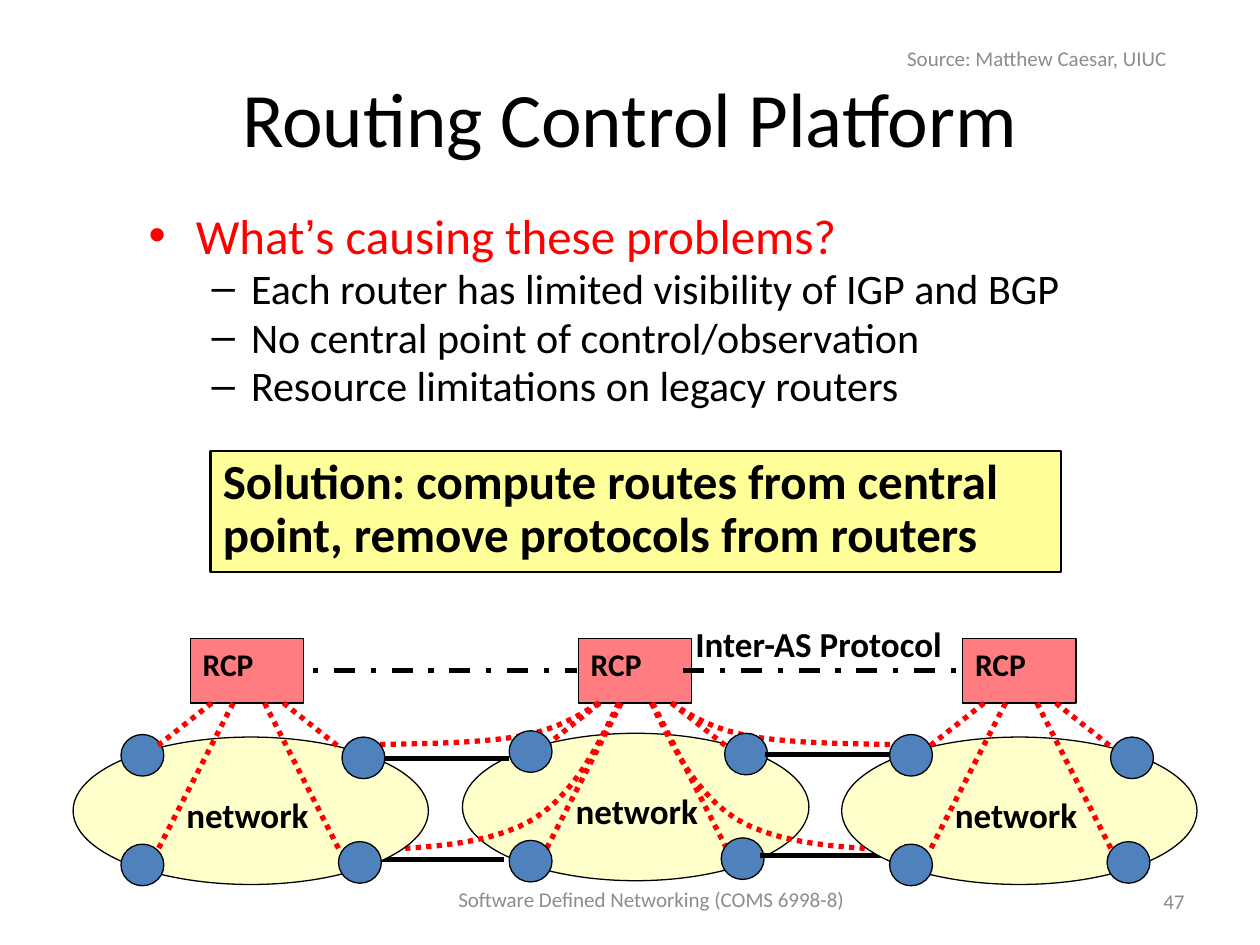
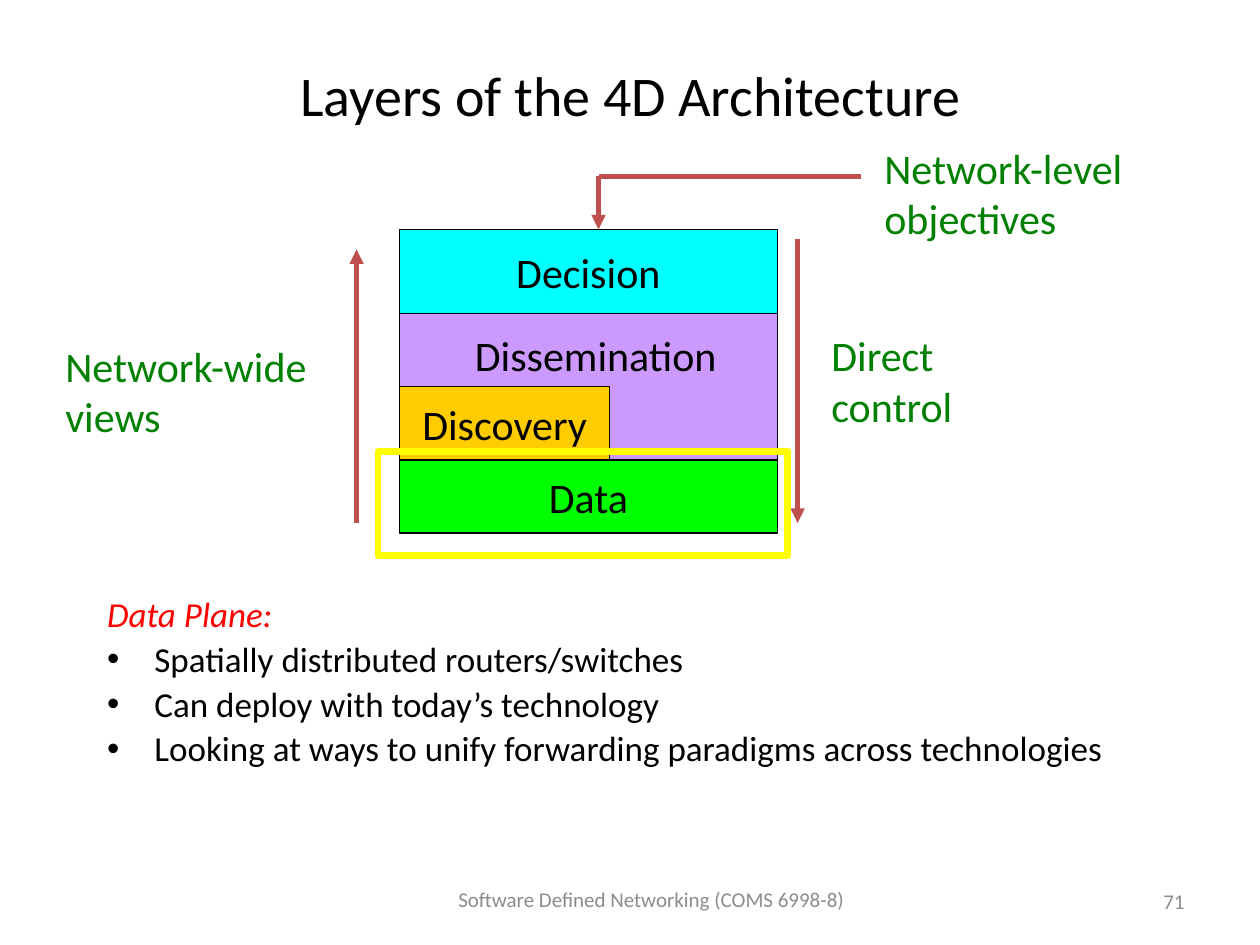
from collections import namedtuple
from dataclasses import dataclass

from lxml import etree
from pptx import Presentation
from pptx.dml.color import RGBColor
from pptx.enum.dml import MSO_LINE
from pptx.enum.shapes import MSO_CONNECTOR, MSO_SHAPE
from pptx.enum.text import MSO_ANCHOR, MSO_AUTO_SIZE, PP_ALIGN
from pptx.oxml.ns import qn
from pptx.util import Inches, Pt

RECTANGLE, OVAL = MSO_SHAPE.RECTANGLE, MSO_SHAPE.OVAL
STRAIGHT = MSO_CONNECTOR.STRAIGHT
DOTTED, DASH_DOT = MSO_LINE.ROUND_DOT, MSO_LINE.DASH_DOT
LEFT, CENTER, RIGHT = PP_ALIGN.LEFT, PP_ALIGN.CENTER, PP_ALIGN.RIGHT
TOP, MIDDLE = MSO_ANCHOR.TOP, MSO_ANCHOR.MIDDLE
NO_AUTOFIT = MSO_AUTO_SIZE.NONE
TITLE_AND_CONTENT = 1

Box = namedtuple("Box", "left top width height")
Run = namedtuple("Run", "text size color bold italic font", defaults=(False, False, "Calibri"))
Item = namedtuple("Item", "runs level bullet", defaults=(0, True))


@dataclass(frozen=True)
class Theme:
    """Colours, type sizes and line widths of the slides."""

    black: str = "000000"
    red: str = "FF0000"
    gray: str = "8C8C8C"
    green: str = "008000"
    arrow: str = "C0504D"
    cloud: str = "FFFFCC"
    router: str = "4F81BD"
    controller: str = "FF7C80"
    solution: str = "FFFF99"
    decision: str = "00FFFF"
    dissemination: str = "CC99FF"
    discovery: str = "FFCC00"
    data: str = "00FF00"
    highlight: str = "FFFF00"
    title: int = 44
    small_title: int = 32
    large: int = 28
    medium: int = 24
    label: int = 20
    controller_label: int = 18
    footer: int = 12
    outline: float = 0.75
    link: float = 3
    arrow_width: float = 2.75


THEME = Theme()


def inches(box):
    """Convert a box to lengths."""
    return [Inches(value) for value in box]


def add_runs(paragraph, runs):
    """Add formatted runs to a paragraph."""
    for item in runs:
        run = paragraph.add_run()
        run.text = item.text
        run.font.name = item.font
        run.font.size = Pt(item.size)
        run.font.bold = item.bold
        run.font.italic = item.italic
        run.font.color.rgb = RGBColor.from_string(item.color)


def write(shape, run, align=LEFT, anchor=TOP, spacing=1.0):
    """Write one run into a shape."""
    frame = shape.text_frame
    frame.word_wrap = True
    frame.vertical_anchor = anchor
    paragraph = frame.paragraphs[0]
    paragraph.alignment = align
    paragraph.line_spacing = spacing
    add_runs(paragraph, [run])


def add_text(slide, box, run, align=LEFT, anchor=TOP):
    """Add a text box."""
    write(slide.shapes.add_textbox(*inches(box)), run, align, anchor)


def style_line(line, color, width, dash=None):
    """Set the colour, width and dash of a line."""
    line.color.rgb = RGBColor.from_string(color)
    line.width = Pt(width)
    if dash:
        line.dash_style = dash


def add_block(slide, kind, box, fill=None, color=THEME.black, width=THEME.outline):
    """Add a filled or hollow preset shape."""
    shape = slide.shapes.add_shape(kind, *inches(box))
    shape.shadow.inherit = False
    if fill:
        shape.fill.solid()
        shape.fill.fore_color.rgb = RGBColor.from_string(fill)
    else:
        shape.fill.background()
    style_line(shape.line, color, width)
    return shape


def add_line(slide, start, end, color=THEME.black, width=THEME.link, dash=None, arrow=False):
    """Add a straight line, with an arrowhead at its end if asked."""
    connector = slide.shapes.add_connector(STRAIGHT, *inches(start + end))
    style_line(connector.line, color, width, dash)
    if arrow:
        line = connector.line._get_or_add_ln()
        etree.SubElement(line, qn("a:tailEnd"), type="triangle")
    etree.SubElement(connector._element.spPr, qn("a:effectLst"))


def bezier(points, steps=10):
    """Return points along a cubic curve, without its start."""
    weights = (1, 3, 3, 1)
    return [
        tuple(
            sum(w * (1 - t) ** (3 - i) * t**i * p[axis] for i, (w, p) in enumerate(zip(weights, points)))
            for axis in (0, 1)
        )
        for t in (step / steps for step in range(1, steps + 1))
    ]


def add_curve(slide, start, width, height):
    """Add a dotted curve that falls steeply and then levels out."""
    shape_points = [(0, 0), (0.09, 0.32), (0.18, 0.62), (0.34, 0.79), (0.51, 0.96), (0.75, 0.98), (1, 1)]
    points = [
        (Inches(start[0] + x * width), Inches(start[1] + y * height))
        for x, y in bezier(shape_points[:4]) + bezier(shape_points[3:])
    ]
    builder = slide.shapes.build_freeform(Inches(start[0]), Inches(start[1]))
    builder.add_line_segments(points, close=False)
    curve = builder.convert_to_shape()
    curve.shadow.inherit = False
    curve.fill.background()
    style_line(curve.line, THEME.red, THEME.link, DOTTED)


def place(shape, box):
    """Move a placeholder and keep its text at full size."""
    shape.left, shape.top, shape.width, shape.height = inches(box)
    shape.text_frame.auto_size = NO_AUTOFIT


def fill_list(shape, box, items, spacing):
    """Fill the body placeholder with list items."""
    place(shape, box)
    frame = shape.text_frame
    frame.vertical_anchor = TOP
    for index, item in enumerate(items):
        paragraph = frame.add_paragraph() if index else frame.paragraphs[0]
        paragraph.level = item.level
        paragraph.line_spacing = spacing
        if not item.bullet:
            etree.SubElement(paragraph._p.get_or_add_pPr(), qn("a:buNone"))
        add_runs(paragraph, item.runs)


def add_base_slide(presentation, title, title_box, title_size, number):
    """Add a slide with its title, footer and number."""
    slide = presentation.slides.add_slide(presentation.slide_layouts[TITLE_AND_CONTENT])
    place(slide.shapes.title, title_box)
    write(slide.shapes.title, Run(title, title_size, THEME.black), CENTER, MIDDLE)
    footer = Run("Software Defined Networking (COMS 6998-8)", THEME.footer, THEME.gray)
    add_text(slide, Box(3.42, 6.92, 3.5, 0.43), footer, CENTER, MIDDLE)
    add_text(slide, Box(7.17, 6.95, 2.33, 0.4), Run(number, THEME.footer, THEME.gray), RIGHT, MIDDLE)
    return slide


def draw_cloud(slide, box):
    """Draw a network oval with its label."""
    add_block(slide, OVAL, box, THEME.cloud)
    label = Run("network", THEME.label, THEME.black, bold=True)
    add_text(slide, Box(box.left + 0.8, box.top + 0.4, 1.19, 0.43), label)


def draw_routers(slide, box):
    """Draw the four border routers of a network."""
    for share, drop in ((0.135, 0.85), (0.135, -0.02), (0.757, 0), (0.747, 0.83)):
        router = Box(box.left + share * box.width, box.top + drop, 0.34, 0.33)
        add_block(slide, OVAL, router, THEME.router)


def draw_links(slide, left, top):
    """Draw the two links between neighbouring networks."""
    for x, y in ((left, top + 0.8), (left + 0.04, top)):
        add_line(slide, (x, y), (x + 1.11, y))


def draw_controller(slide, box):
    """Draw a controller with its dotted lines to four routers."""
    label = Run("RCP", THEME.controller_label, THEME.black, bold=True)
    write(add_block(slide, RECTANGLE, box, THEME.controller), label)
    spokes = ((0.17, -0.26, 0.85), (0.34, -0.26, 1.68), (0.74, 1.17, 0.85), (0.59, 1.18, 1.67))
    for start, end, drop in spokes:
        add_line(
            slide,
            (box.left + start, box.top + box.height),
            (box.left + end, box.top + drop),
            THEME.red,
            dash=DOTTED,
        )


def draw_peering(slide, left, top):
    """Draw the dashed line between two controllers."""
    add_line(slide, (left, top), (left + 2.39, top), dash=DASH_DOT)


def draw_networks(slide, box):
    """Draw three linked networks and their controllers."""
    left, top = box.left, box.top
    west, middle, east = (
        Box(left, top + 0.78, 2.82, 1.17),
        Box(left + 3.09, top + 0.75, 2.75, 1.17),
        Box(left + 6.1, top + 0.78, 2.82, 1.17),
    )
    west_controller, middle_controller, east_controller = (
        Box(left + x, top, 0.9, 0.51) for x in (0.93, 4.01, 7.06)
    )
    draw_cloud(slide, middle)
    draw_controller(slide, middle_controller)
    center = left + 4.46
    for side in (1, -1):
        add_curve(slide, (center + side * 0.29, top + 0.51), side * 1.8, 0.33)
        add_curve(slide, (center + side * 0.13, top + 0.51), side * 2, 1.17)
    draw_links(slide, left + 2.31, top + 0.95)
    draw_cloud(slide, west)
    draw_routers(slide, west)
    draw_routers(slide, middle)
    draw_links(slide, left + 5.45, top + 0.92)
    draw_cloud(slide, east)
    draw_routers(slide, east)
    draw_peering(slide, left + 1.61, top + 0.25)
    draw_controller(slide, west_controller)
    draw_peering(slide, left + 4.84, top + 0.25)
    protocol = Run("Inter-AS Protocol", THEME.label, THEME.black, bold=True)
    add_text(slide, Box(left + 4.84, top - 0.18, 2.32, 0.43), protocol)
    draw_controller(slide, east_controller)


def build_routing_slide(presentation):
    """Build the routing control platform slide."""
    slide = add_base_slide(presentation, "Routing Control Platform", Box(0.5, 0.3, 9, 1.25), THEME.title, "47")
    question = [
        Run("What", THEME.large, THEME.red),
        Run("’", THEME.large, THEME.red, font="Arial"),
        Run("s causing these problems?", THEME.large, THEME.red),
    ]
    causes = (
        "Each router has limited visibility of IGP and BGP",
        "No central point of control/observation",
        "Resource limitations on legacy routers",
    )
    items = [Item(question)] + [Item([Run(cause, THEME.medium, THEME.black)], level=1) for cause in causes]
    fill_list(slide.placeholders[1], Box(1.08, 1.67, 8.17, 1.83), items, 0.8)
    solution = "Solution: compute routes from central point, remove protocols from routers"
    banner = add_block(slide, RECTANGLE, Box(1.67, 3.58, 6.75, 0.96), THEME.solution, width=1.5)
    write(banner, Run(solution, THEME.large, THEME.black, bold=True), spacing=0.9)
    draw_networks(slide, Box(0.58, 5.07, 8.92, 1.95))
    source = Run("Source: Matthew Caesar, UIUC", THEME.footer, THEME.gray)
    add_text(slide, Box(6.48, 0.25, 3.5, 0.43), source, CENTER, MIDDLE)


def draw_layers(slide, box):
    """Draw the stacked layers with the data layer highlighted."""
    left, top, width, _ = box
    add_block(slide, RECTANGLE, Box(left, top + 0.67, width, 1.16), THEME.dissemination)
    dissemination = Run("Dissemination", THEME.medium, THEME.black)
    add_text(slide, Box(left + 0.5, top + 0.75, 2.42, 0.5), dissemination)
    layers = (
        ("Decision", 0, width, 0.67, THEME.decision),
        ("Discovery", 1.25, 1.67, 0.58, THEME.discovery),
        ("Data", 1.83, width, 0.58, THEME.data),
    )
    for name, drop, layer_width, height, color in layers:
        layer = add_block(slide, RECTANGLE, Box(left, top + drop, layer_width, height), color)
        write(layer, Run(name, THEME.medium, THEME.black), CENTER, MIDDLE)
    highlight = Box(left - 0.17, top + 1.76, width + 0.25, 0.83)
    flows = (
        ((-0.34, 2.33), (-0.34, 0.16), True),
        ((3.16, 0.08), (3.16, 2.33), True),
        ((1.58, -0.42), (1.58, 0), True),
        ((1.58, -0.42), (3.66, -0.42), False),
    )
    for start, end, arrow in flows:
        start, end = ((left + x, top + y) for x, y in (start, end))
        add_line(slide, start, end, THEME.arrow, THEME.arrow_width, arrow=arrow)
    add_block(slide, RECTANGLE, highlight, color=THEME.highlight, width=4)


def build_layers_slide(presentation):
    """Build the 4D architecture slide."""
    title_box = Box(1.18, 0.39, 7.65, 0.72)
    slide = add_base_slide(presentation, "Layers of the 4D Architecture", title_box, THEME.small_title, "71")
    points = (
        "Spatially distributed routers/switches",
        "Can deploy with today’s technology",
        "Looking at ways to unify forwarding paradigms across technologies",
    )
    heading = Item([Run("Data Plane:", THEME.label, THEME.red, italic=True)], bullet=False)
    items = [heading] + [Item([Run(point, THEME.label, THEME.black)]) for point in points]
    fill_list(slide.placeholders[1], Box(0.75, 4.69, 8.5, 1.97), items, 0.9)
    draw_layers(slide, Box(3.17, 1.82, 3, 2.41))
    captions = (
        ("Network-level objectives", Box(6.92, 1.08, 2.5, 0.9)),
        ("Direct control", Box(6.5, 2.57, 1.67, 0.9)),
        ("Network-wide views", Box(0.42, 2.65, 2.33, 0.9)),
    )
    for caption, box in captions:
        add_text(slide, box, Run(caption, THEME.medium, THEME.green))


def main():
    """Build and save the presentation."""
    presentation = Presentation()
    presentation.slide_width, presentation.slide_height = Inches(10), Inches(7.5)
    build_routing_slide(presentation)
    build_layers_slide(presentation)
    presentation.save("out.pptx")


if __name__ == "__main__":
    main()
